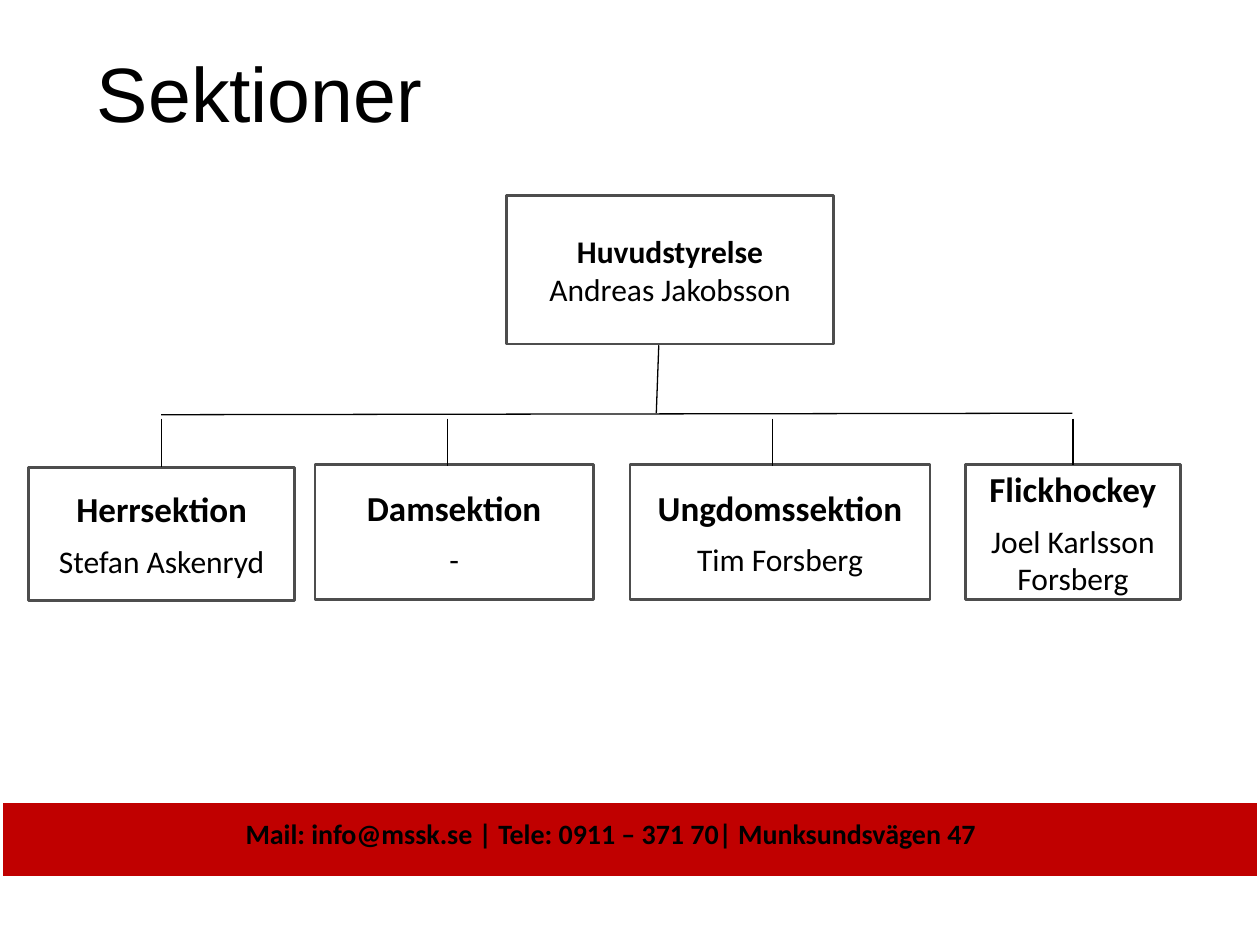
from dataclasses import dataclass

from lxml import etree
from pptx import Presentation
from pptx.dml.color import RGBColor
from pptx.enum.shapes import MSO_CONNECTOR, MSO_SHAPE
from pptx.enum.text import MSO_ANCHOR, MSO_AUTO_SIZE, PP_ALIGN
from pptx.oxml.ns import qn
from pptx.util import Cm, Pt

STRAIGHT = MSO_CONNECTOR.STRAIGHT
RECTANGLE = MSO_SHAPE.RECTANGLE
TOP, MIDDLE = MSO_ANCHOR.TOP, MSO_ANCHOR.MIDDLE
LEFT, CENTER = PP_ALIGN.LEFT, PP_ALIGN.CENTER
NO_AUTOFIT = MSO_AUTO_SIZE.NONE
TITLE_ONLY = 5
TOP_SITE = 0


@dataclass(frozen=True)
class Theme:
    """Colours, fonts and type sizes of the slide."""

    black: RGBColor = RGBColor(0, 0, 0)
    white: RGBColor = RGBColor(255, 255, 255)
    red: RGBColor = RGBColor(0xC0, 0, 0)
    grey: RGBColor = RGBColor(0x4D, 0x4D, 0x4D)
    title_font: str = "Arial"
    body_font: str = "Calibri"
    title_size: int = 44
    section_size: int = 20
    name_size: int = 18
    footer_size: int = 16


THEME = Theme()
BOARD = ("Huvudstyrelse", "Andreas Jakobsson", (10.21, 3.94, 6.6, 3))
SECTIONS = [
    ("Herrsektion", "Stefan Askenryd", (0.58, 9.42, 5.36, 2.69)),
    ("Damsektion", "-", (6.35, 9.37, 5.61, 2.72)),
    ("Ungdomssektion", "Tim Forsberg", (12.7, 9.37, 6.05, 2.72)),
    ("Flickhockey", "Joel Karlsson Forsberg", (19.46, 9.37, 4.34, 2.72)),
]
STEM_X = [3.26, 9.02, 15.57, 21.63]
STEM_TOP, STEM_BOTTOM = 8.44, 9.39


def style_paragraph(para, text, size, bold=False, align=LEFT, font=THEME.body_font):
    """Fill a paragraph and set its font and alignment."""
    para.text = text
    para.alignment = align
    para.font.name = font
    para.font.size = Pt(size)
    para.font.bold = bold
    para.font.color.rgb = THEME.black


def add_rectangle(slide, place, fill, line, width):
    """Add a flat rectangle with a fill and an outline."""
    box = slide.shapes.add_shape(RECTANGLE, *map(Cm, place))
    box.shadow.inherit = False
    box.fill.solid()
    box.fill.fore_color.rgb = fill
    box.line.color.rgb = line
    box.line.width = Pt(width)
    return box


def add_unit(slide, heading, person, place, heading_size, gap=0):
    """Add a chart box with a bold heading above a name."""
    box = add_rectangle(slide, place, THEME.white, THEME.grey, 1.5)
    frame = box.text_frame
    frame.word_wrap = True
    frame.vertical_anchor = MIDDLE
    style_paragraph(frame.paragraphs[0], heading, heading_size, True, CENTER)
    para = frame.add_paragraph()
    style_paragraph(para, person, THEME.name_size, False, CENTER)
    para.space_before = Pt(gap)
    return box


def add_line(slide, start, end):
    """Add a thin black line between two points."""
    line = slide.shapes.add_connector(STRAIGHT, *map(Cm, (*start, *end)))
    line.line.color.rgb = THEME.black
    line.line.width = Pt(0.75)
    etree.SubElement(line._element.spPr, qn("a:effectLst"))
    return line


def add_stem(slide, x, box):
    """Add a line down to a box, joined when it meets the middle of its top."""
    line = add_line(slide, (x, STEM_TOP), (x, STEM_BOTTOM))
    if abs(box.left + box.width // 2 - Cm(x)) < Cm(0.02):
        line.end_connect(box, TOP_SITE)


def add_title(slide, text):
    """Place and format the title placeholder."""
    title = slide.shapes.title
    title.left, title.top, title.width, title.height = map(Cm, (1.7, 0.64, 22.66, 2.74))
    frame = title.text_frame
    frame.vertical_anchor = TOP
    frame.auto_size = NO_AUTOFIT
    frame.margin_top = Cm(0.28)
    style_paragraph(frame.paragraphs[0], text, THEME.title_size, font=THEME.title_font)


def add_footer(slide, text):
    """Add the red contact band."""
    add_rectangle(slide, (0, 16.13, 25.4, 1.6), THEME.red, THEME.white, 3.75)
    box = slide.shapes.add_textbox(*map(Cm, (4.7, 16.33, 18.01, 0.99)))
    box.text_frame.word_wrap = True
    style_paragraph(box.text_frame.paragraphs[0], text, THEME.footer_size, True)


def main():
    """Build the slide and save it."""
    deck = Presentation()
    deck.slide_width, deck.slide_height = Cm(25.4), Cm(19.05)
    slide = deck.slides.add_slide(deck.slide_layouts[TITLE_ONLY])
    add_footer(slide, "Mail: info@mssk.se | Tele: 0911 – 371 70| Munksundsvägen 47")
    add_title(slide, "Sektioner")
    add_unit(slide, *BOARD, THEME.name_size)
    add_line(slide, (13.28, 6.96), (13.23, 8.33))
    add_line(slide, (3.25, 8.36), (21.62, 8.33))
    for section, x in zip(SECTIONS, STEM_X):
        box = add_unit(slide, *section, THEME.section_size, gap=7)
        add_stem(slide, x, box)
    deck.save("out.pptx")


if __name__ == "__main__":
    main()
